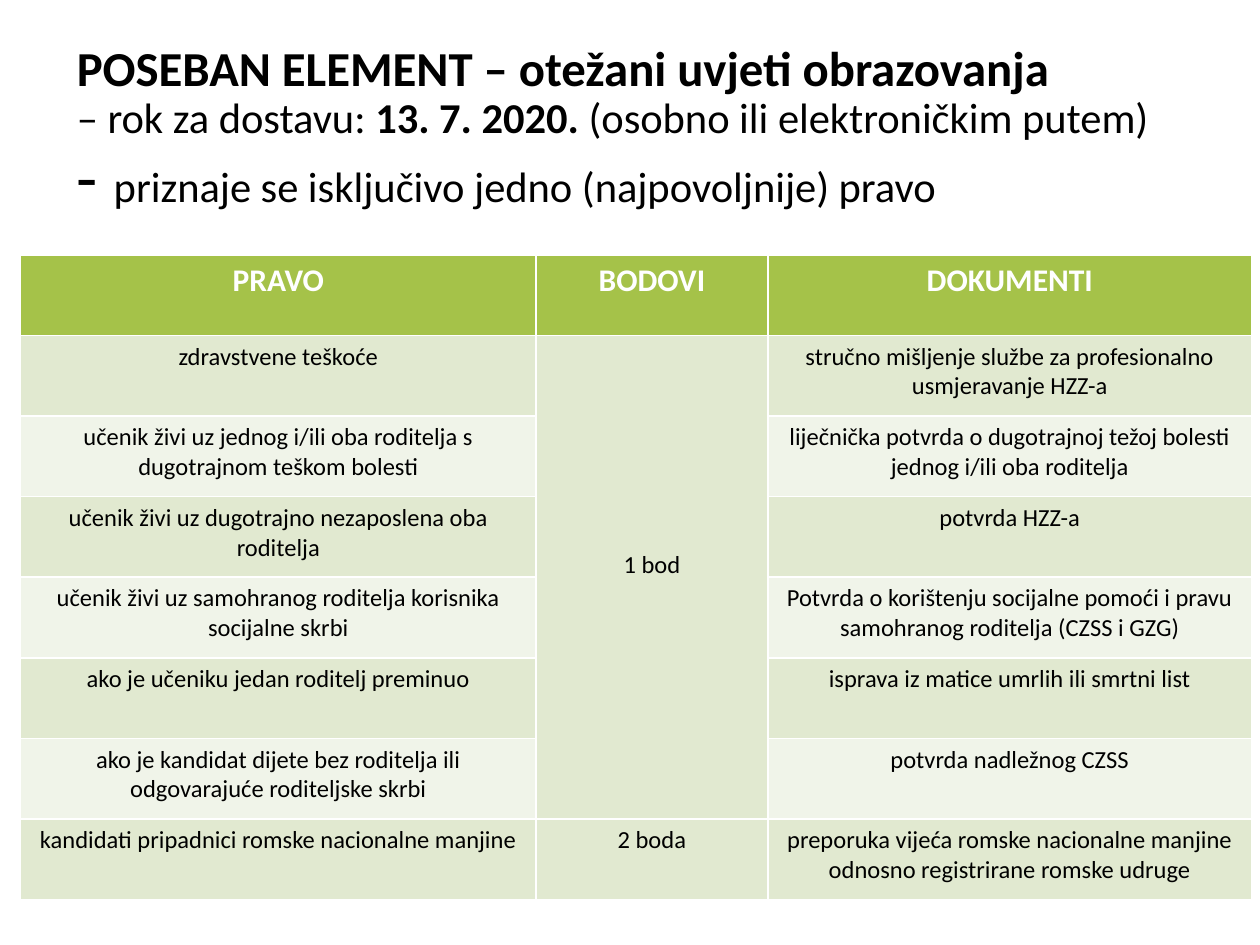
from pptx import Presentation
from pptx.dml.color import RGBColor
from pptx.enum.text import MSO_ANCHOR as Anchor, MSO_AUTO_SIZE as Fit, PP_ALIGN as Align
from pptx.util import Pt

COLORS = {"head": "A5C249", "dark": "E1E9D0", "light": "F0F4E9",
          "white": "FFFFFF", "black": "000000"}
HEADS = ["PRAVO", "BODOVI", "DOKUMENTI"]
RIGHTS = [
    ("zdravstvene teškoće", "1 bod",
     "stručno mišljenje službe za profesionalno usmjeravanje HZZ-a"),
    ("učenik živi uz jednog i/ili oba roditelja s dugotrajnom teškom bolesti", "",
     "liječnička potvrda o dugotrajnoj težoj bolesti jednog i/ili oba roditelja"),
    ("učenik živi uz dugotrajno nezaposlena oba roditelja", "", "potvrda HZZ-a"),
    ("učenik živi uz samohranog roditelja korisnika socijalne skrbi", "",
     "Potvrda o korištenju socijalne pomoći i pravu samohranog roditelja (CZSS i GZG)"),
    ("ako je učeniku jedan roditelj preminuo", "",
     "isprava iz matice umrlih ili smrtni list"),
    ("ako je kandidat dijete bez roditelja ili odgovarajuće roditeljske skrbi", "",
     "potvrda nadležnog CZSS"),
    ("kandidati pripadnici romske nacionalne manjine", "2 boda",
     "preporuka vijeća romske nacionalne manjine odnosno registrirane romske udruge"),
]
TITLE = [
    [("POSEBAN ELEMENT – otežani uvjeti obrazovanja", 27.9, True)],
    [("– rok za dostavu: ", 24.3, False), ("13. 7. 2020. ", 24.3, True),
     ("(osobno ili elektroničkim putem)", 24.3, False)],
    [("- ", 39.6, False),
     ("priznaje se isključivo jedno (najpovoljnije) pravo", 24.3, False)],
]
WIDTHS = [294.5, 132.5, 276.5]
ROW = 46.08


def color(name):
    return RGBColor.from_string(COLORS[name])


def add_run(para, text, size, bold, tint="black"):
    run = para.add_run()
    run.text = text
    for key, value in {"name": "Calibri", "size": Pt(size), "bold": bold}.items():
        setattr(run.font, key, value)
    run.font.color.rgb = color(tint)


def add_title(slide):
    title = slide.shapes.title
    place = {"left": 36.7, "top": 20.9, "width": 652.3, "height": 108}
    for key, value in place.items():
        setattr(title, key, Pt(value))
    frame = title.text_frame
    form = {"word_wrap": True, "auto_size": Fit.NONE, "vertical_anchor": Anchor.MIDDLE}
    for key, value in form.items():
        setattr(frame, key, value)
    para = frame.paragraphs[0]
    para.alignment, para.line_spacing = Align.LEFT, 0.9
    for i, line in enumerate(TITLE):
        if i:
            para.add_line_break()
        for text, size, bold in line:
            add_run(para, text, size, bold)


def fill_cell(cell, text, fill, size=14, bold=False, tint="black"):
    cell.fill.solid()
    cell.fill.fore_color.rgb = color(fill)
    para = cell.text_frame.paragraphs[0]
    para.alignment = Align.CENTER
    para.font.size = Pt(size)
    if text:
        add_run(para, text, size, bold, tint)


def add_grid(slide):
    count = len(RIGHTS) + 1
    frame = slide.shapes.add_table(count, len(HEADS), Pt(11.8), Pt(145.6),
                                   Pt(sum(WIDTHS)), Pt(ROW * count))
    table = frame.table
    for col, width in zip(table.columns, WIDTHS):
        col.width = Pt(width)
    for row in table.rows:
        row.height = Pt(ROW)
    for c, text in enumerate(HEADS):
        fill_cell(table.cell(0, c), text, "head", 18, True, "white")
    for r, texts in enumerate(RIGHTS, 1):
        for c, text in enumerate(texts):
            fill_cell(table.cell(r, c), text, "dark" if r % 2 else "light")
    points = table.cell(1, 1)
    points.merge(table.cell(6, 1))
    points.vertical_anchor = Anchor.MIDDLE
    points.margin_bottom = Pt(17)


def main():
    deck = Presentation()
    deck.slide_width, deck.slide_height = Pt(720), Pt(540)
    slide = deck.slides.add_slide(deck.slide_layouts[5])
    add_title(slide)
    add_grid(slide)
    deck.save("out.pptx")


if __name__ == "__main__":
    main()
